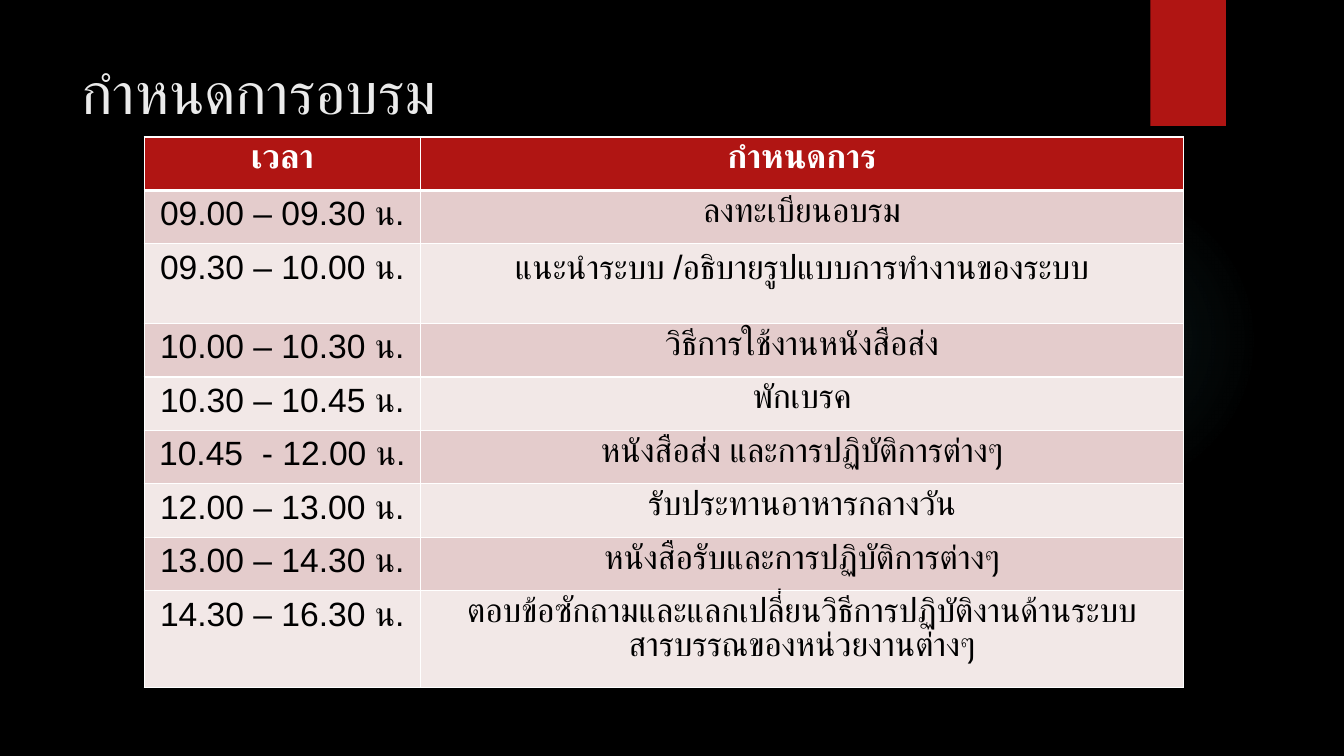
from dataclasses import dataclass
from typing import NamedTuple

from pptx import Presentation
from pptx.dml.color import RGBColor
from pptx.enum import shapes, text
from pptx.oxml import parse_xml
from pptx.oxml.ns import nsdecls
from pptx.util import Inches, Pt


@dataclass(frozen=True)
class Theme:
    background: str = "000000"
    accent: str = "B01513"
    glow: str = "50B9C1"
    title: str = "EBEBEB"
    white: str = "FFFFFF"
    body: str = "000000"
    bands: tuple[str, str] = ("E4CCCC", "F2E8E7")
    title_font: str = "League Spartan"
    table_font: str = "Arial"
    title_size: float = 42
    table_size: float = 24


class Session(NamedTuple):
    time: str
    topic: str
    height: float = 0.53


THEME = Theme()
COLUMN_WIDTHS = (2.74, 7.57)
GLOW_STOPS = ((0, 7), (36, 6), (69, 0))
SCHEDULE = (
    Session("เวลา", "กำหนดการ"),
    Session("09.00 – 09.30 น.", "ลงทะเบียนอบรม"),
    Session("09.30 – 10.00 น.", "แนะนำระบบ /อธิบายรูปแบบการทำงานของระบบ", 0.79),
    Session("10.00 – 10.30 น.", "วิธีการใช้งานหนังสือส่ง"),
    Session("10.30 – 10.45 น.", "พักเบรค"),
    Session("10.45  - 12.00 น.", "หนังสือส่ง และการปฏิบัติการต่างๆ"),
    Session("12.00 – 13.00 น.", "รับประทานอาหารกลางวัน"),
    Session("13.00 – 14.30 น.", "หนังสือรับและการปฏิบัติการต่างๆ"),
    Session(
        "14.30 – 16.30 น.",
        "ตอบข้อซักถามและแลกเปลี่ยนวิธีการปฏิบัติงานด้านระบบ\nสารบรรณของหน่วยงานต่างๆ",
        0.96,
    ),
)


def write(tf, content: str, *, font: str, size: float, color: str,
          bold: bool = False, align=text.PP_ALIGN.LEFT) -> None:
    p = tf.paragraphs[0]
    p.text = content
    p.alignment = align
    for r in p.runs:
        r.font.name = font
        r.font.size = Pt(size)
        r.font.bold = bold
        r.font.color.rgb = RGBColor.from_string(color)


def add_plain(s, kind, left: float, top: float, width: float, height: float, color: str):
    sp = s.shapes.add_shape(kind, Inches(left), Inches(top), Inches(width), Inches(height))
    sp.shadow.inherit = False
    sp.fill.solid()
    sp.fill.fore_color.rgb = RGBColor.from_string(color)
    sp.line.fill.background()
    return sp


def add_glow(s) -> None:
    sp = add_plain(s, shapes.MSO_SHAPE.OVAL, 9.41, 1.83, 3.08, 3.08, THEME.glow)
    stops = "".join(
        f'<a:gs pos="{pos * 1000}"><a:srgbClr val="{THEME.glow}">'
        f'<a:alpha val="{alpha * 1000}"/></a:srgbClr></a:gs>'
        for pos, alpha in GLOW_STOPS
    )
    gradient = parse_xml(
        f'<a:gradFill {nsdecls("a")}><a:gsLst>{stops}</a:gsLst><a:path path="circle">'
        '<a:fillToRect l="50000" t="50000" r="50000" b="50000"/></a:path></a:gradFill>'
    )
    spPr = sp.element.spPr
    spPr.replace(spPr.find("{*}solidFill"), gradient)


def set_borders(cell, top: float, bottom: float) -> None:
    tcPr = cell._tc.get_or_add_tcPr()
    for side, width in (("L", 1), ("R", 1), ("T", top), ("B", bottom)):
        tcPr.append(parse_xml(
            f'<a:ln{side} {nsdecls("a")} w="{Pt(width)}"><a:solidFill>'
            f'<a:srgbClr val="{THEME.white}"/></a:solidFill></a:ln{side}>'
        ))


def add_schedule(s) -> None:
    height = sum(session.height for session in SCHEDULE)
    table = s.shapes.add_table(
        len(SCHEDULE), len(COLUMN_WIDTHS), Inches(1.43), Inches(1.36),
        Inches(sum(COLUMN_WIDTHS)), Inches(height),
    ).table
    for column, width in zip(table.columns, COLUMN_WIDTHS):
        column.width = Inches(width)
    for i, session in enumerate(SCHEDULE):
        header = i == 0
        table.rows[i].height = Inches(session.height)
        for j, content in enumerate((session.time, session.topic)):
            cell = table.cell(i, j)
            set_borders(cell, 3 if i == 1 else 1, 3 if header else 1)
            cell.fill.solid()
            fill = THEME.accent if header else THEME.bands[(i - 1) % 2]
            cell.fill.fore_color.rgb = RGBColor.from_string(fill)
            write(cell.text_frame, content, font=THEME.table_font, size=THEME.table_size,
                  color=THEME.white if header else THEME.body, bold=header,
                  align=text.PP_ALIGN.CENTER)


def add_title(s) -> None:
    title = s.shapes.title
    title.left, title.top = Inches(0.71), Inches(0.5)
    title.width, title.height = Inches(10.29), Inches(1.53)
    tf = title.text_frame
    tf.auto_size = text.MSO_AUTO_SIZE.NONE
    tf.vertical_anchor = text.MSO_ANCHOR.TOP
    write(tf, "กำหนดการอบรม", font=THEME.title_font, size=THEME.title_size, color=THEME.title)


def main() -> None:
    prs = Presentation()
    prs.slide_width, prs.slide_height = Inches(13.33), Inches(7.5)
    s = prs.slides.add_slide(prs.slide_layouts[5])
    s.background.fill.solid()
    s.background.fill.fore_color.rgb = RGBColor.from_string(THEME.background)
    add_glow(s)
    add_plain(s, shapes.MSO_SHAPE.RECTANGLE, 11.41, 0, 0.75, 1.25, THEME.accent)
    add_title(s)
    add_schedule(s)
    prs.save("out.pptx")


if __name__ == "__main__":
    main()
